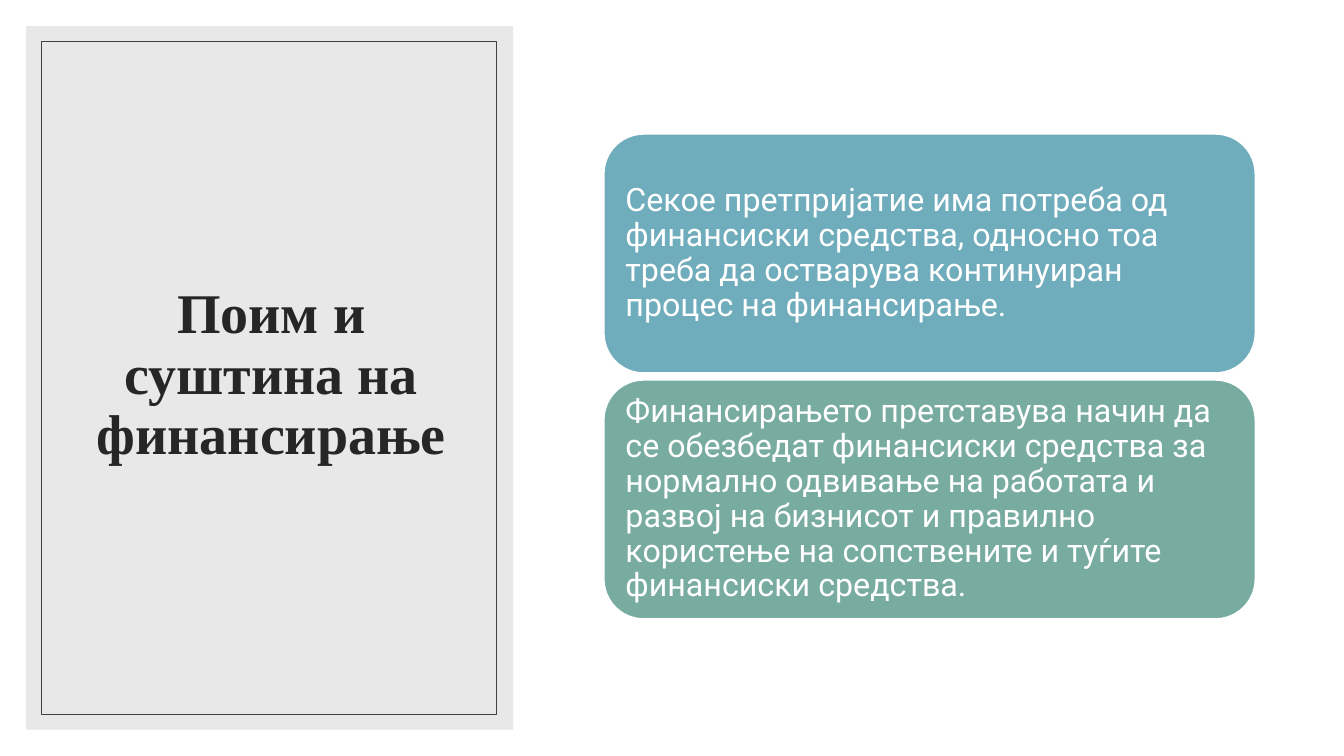
import pptx
import pptx.util
import pptx.dml.color
import pptx.enum.shapes
import pptx.enum.text
import pptx.oxml.ns
import lxml.etree

Inches, Pt = pptx.util.Inches, pptx.util.Pt
SHAPE = pptx.enum.shapes.MSO_SHAPE
ALIGN = pptx.enum.text.PP_ALIGN

COLORS = {
    "white": "FFFFFF",
    "panel": "D9D9D9",
    "frame": "404040",
    "title": "262626",
    "blue": "6FACBC",
    "green": "79ACA1",
}


class SlideBuilder:
    title_font = "Times New Roman"
    body_font = "Roboto"

    def __init__(self, slide):
        self.s = slide

    def color(self, name):
        return pptx.dml.color.RGBColor.from_string(COLORS[name])

    def shape(self, kind, box, fill=None, line=None, width=1, opacity=None):
        sp = self.s.shapes.add_shape(kind, *map(Inches, box))
        sp.shadow.inherit = False
        if fill:
            sp.fill.solid()
            sp.fill.fore_color.rgb = self.color(fill)
        else:
            sp.fill.background()
        if opacity:
            clr = sp.element.spPr.find(".//" + pptx.oxml.ns.qn("a:srgbClr"))
            alpha = lxml.etree.SubElement(clr, pptx.oxml.ns.qn("a:alpha"))
            alpha.set("val", str(opacity * 1000))
        if line:
            sp.line.color.rgb = self.color(line)
            sp.line.width = Pt(width)
        else:
            sp.line.fill.background()
        return sp

    def add_text(self, sp, text, font, size, color, align, bold=False):
        tf = sp.text_frame
        tf.word_wrap = True
        tf.vertical_anchor = pptx.enum.text.MSO_ANCHOR.MIDDLE
        p = tf.paragraphs[0]
        p.alignment = align
        p.line_spacing = 0.9
        r = p.add_run()
        r.text = text
        r.font.name = font
        r.font.size = Pt(size)
        r.font.bold = bold
        r.font.color.rgb = self.color(color)
        return tf

    def title(self, box, text):
        sp = self.s.shapes.add_textbox(*map(Inches, box))
        self.add_text(sp, text, self.title_font, 40, "title", ALIGN.CENTER, True)

    def card(self, box, fill, text):
        sp = self.shape(SHAPE.ROUNDED_RECTANGLE, box, fill, "white")
        tf = self.add_text(sp, text, self.body_font, 23, "white", ALIGN.LEFT)
        tf.margin_left = tf.margin_right = Inches(0.1)
        tf.margin_top = tf.margin_bottom = Inches(0.1)


def main():
    prs = pptx.Presentation()
    prs.slide_width, prs.slide_height = Inches(13.33), Inches(7.5)
    b = SlideBuilder(prs.slides.add_slide(prs.slide_layouts[6]))

    # Title panel with its thin frame
    b.shape(SHAPE.RECTANGLE, (0.26, 0.26, 4.83, 6.98), "panel", opacity=60)
    b.title((0.63, 0.61, 4.12, 6.24), "Поим и суштина на финансирање")
    b.shape(SHAPE.RECTANGLE, (0.41, 0.41, 4.51, 6.68), line="frame", width=0.5)

    # Stacked text cards
    cards = [
        ("blue", "Секое претпријатие има потреба од финансиски средства, "
                 "односно тоа треба да остварува континуиран процес на "
                 "финансирање."),
        ("green", "Финансирањето претставува начин да се обезбедат "
                  "финансиски средства за нормално одвивање на работата и "
                  "развој на бизнисот и правилно користење на сопствените и "
                  "туѓите финансиски средства."),
    ]
    height, gap = 2.37, 0.07
    for i, (fill, text) in enumerate(cards):
        b.card((5.99, 1.33 + i * (height + gap), 6.46, height), fill, text)

    prs.save("out.pptx")


if __name__ == "__main__":
    main()
